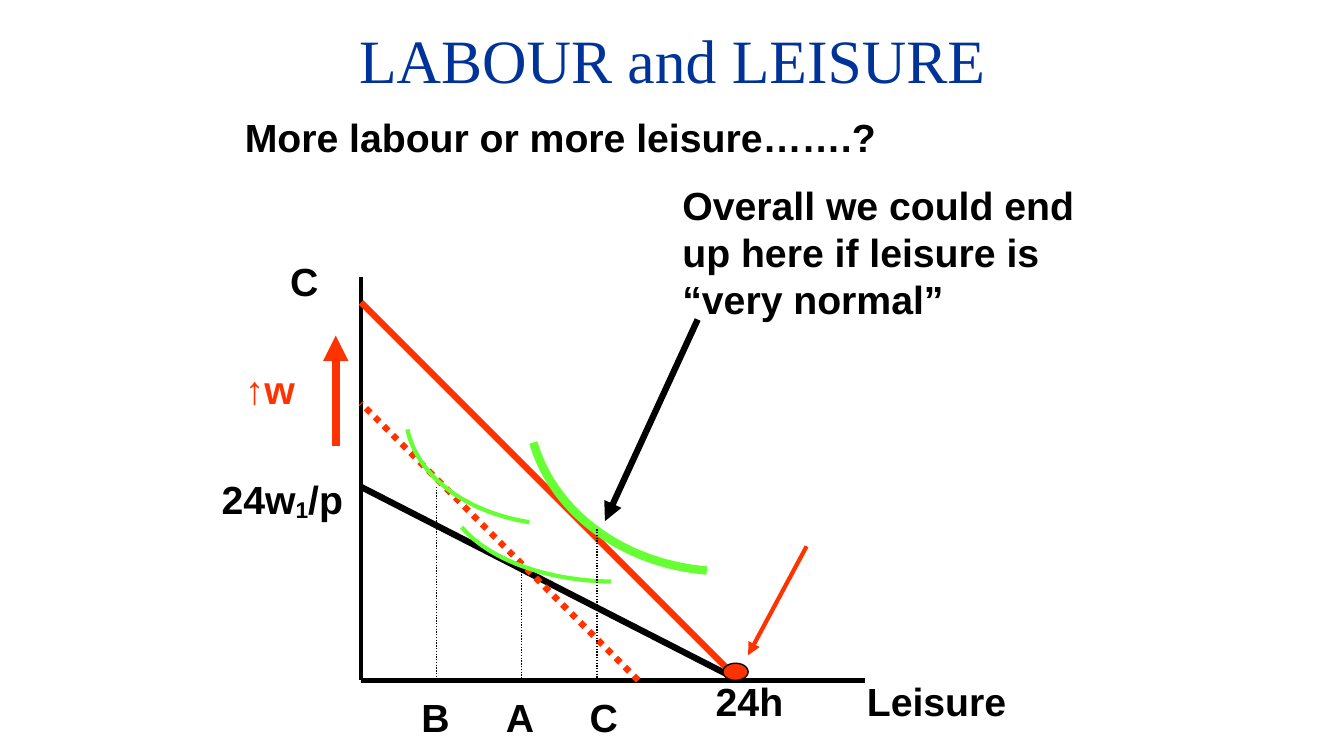
"""Build the labour and leisure budget-line slide."""
from dataclasses import dataclass
from typing import Optional

from lxml import etree
from pptx import Presentation
from pptx.dml.color import RGBColor
from pptx.enum.dml import MSO_LINE
from pptx.enum.shapes import MSO_CONNECTOR, MSO_SHAPE
from pptx.enum.text import MSO_ANCHOR, MSO_AUTO_SIZE, PP_ALIGN
from pptx.oxml.ns import qn
from pptx.slide import Slide
from pptx.util import Inches, Pt

STRAIGHT = MSO_CONNECTOR.STRAIGHT
ELLIPSE = MSO_SHAPE.OVAL
DOTTED = MSO_LINE.ROUND_DOT
TOP, MIDDLE = MSO_ANCHOR.TOP, MSO_ANCHOR.MIDDLE
LEFT, CENTER, RIGHT = PP_ALIGN.LEFT, PP_ALIGN.CENTER, PP_ALIGN.RIGHT
GROW, FIXED = MSO_AUTO_SIZE.SHAPE_TO_FIT_TEXT, MSO_AUTO_SIZE.NONE

Point = tuple[float, float]


@dataclass(frozen=True)
class Theme:
    black: RGBColor = RGBColor(0x00, 0x00, 0x00)
    blue: RGBColor = RGBColor(0x00, 0x33, 0x99)
    red: RGBColor = RGBColor(0xFF, 0x33, 0x00)
    green: RGBColor = RGBColor(0x66, 0xFF, 0x33)
    title_font: str = "Times New Roman"
    body_font: str = "Arial"
    title_size: float = 44
    body_size: float = 28


THEME = Theme()


@dataclass(frozen=True)
class Label:
    box: tuple[float, float, float, float]
    runs: tuple[str, ...]
    color: RGBColor = THEME.black
    align: PP_ALIGN = LEFT
    subscript: Optional[str] = None
    is_title: bool = False


@dataclass(frozen=True)
class Segment:
    start: Point
    end: Point
    color: RGBColor = THEME.black
    width: float = 4.5
    dotted: bool = False
    arrow: bool = False


@dataclass(frozen=True)
class IndifferenceCurve:
    points: tuple[Point, Point, Point, Point]
    width: float = 3


ORIGIN: Point = (3.58, 6.75)
LABEL_HEIGHT = 0.57
LETTER_TOP = 6.83

SEGMENTS = (
    Segment((ORIGIN[0], 2.75), ORIGIN, width=3),
    Segment(ORIGIN, (8.58, ORIGIN[1]), width=3),
    Segment((ORIGIN[0], 4.83), (7.33, ORIGIN[1])),
    Segment((7.25, 6.67), (ORIGIN[0], 3), THEME.red),
    Segment((6.33, ORIGIN[1]), (ORIGIN[0], 4), THEME.red, dotted=True),
    Segment((3.33, 4.42), (3.33, 3.33), THEME.red, 6, arrow=True),
    Segment((8, 5.42), (7.42, 6.5), THEME.red, 3, arrow=True),
    Segment((6.92, 3.17), (6, 5.17), arrow=True),
)

CURVES = (
    IndifferenceCurve(((7.01, 5.66), (6.17, 5.59), (5.49, 5.08), (5.29, 4.39)), 6),
    IndifferenceCurve(((6.06, 5.77), (5.41, 5.76), (4.85, 5.55), (4.58, 5.23))),
    IndifferenceCurve(((5.25, 5.18), (4.61, 5.08), (4.14, 4.72), (4.04, 4.26))),
)

GUIDES = tuple(
    Segment((x, top), (x, ORIGIN[1]), width=1, dotted=True)
    for x, top in ((4.33, 4.83), (5.17, 5.67), (5.92, 5.25))
)

LABELS = (
    Label((2.42, 0.25, 8.5, 0.67), ("LABOUR and LEISURE",), THEME.blue, CENTER, is_title=True),
    Label((2.33, 1.08, 6.83, LABEL_HEIGHT), ("More labour or more leisure…….?",)),
    Label((6.67, 1.75, 4.33, 1.5), ("Overall we could end up here if leisure is “very normal”",)),
    Label((2.78, 2.5, 0.89, LABEL_HEIGHT), ("C",)),
    Label((2.33, 3.58, 0.75, LABEL_HEIGHT), ("↑w",), THEME.red),
    Label((1.92, 4.67, 1.58, LABEL_HEIGHT), ("24w", "1", "/p"), align=RIGHT, subscript="1"),
    Label((7, 6.67, 1.08, LABEL_HEIGHT), ("24h",)),
    Label((8.5, 6.67, 1.83, LABEL_HEIGHT), ("Leisure",)),
    Label((4.08, LETTER_TOP, 0.42, LABEL_HEIGHT), ("B",)),
    Label((4.92, LETTER_TOP, 0.58, LABEL_HEIGHT), ("A",)),
    Label((5.75, LETTER_TOP, 0.75, LABEL_HEIGHT), ("C",)),
)


def add_label(slide: Slide, label: Label) -> None:
    shape = slide.shapes.add_textbox(*map(Inches, label.box))
    frame = shape.text_frame
    frame.word_wrap = True
    frame.auto_size = FIXED if label.is_title else GROW
    frame.vertical_anchor = MIDDLE if label.is_title else TOP
    paragraph = frame.paragraphs[0]
    paragraph.alignment = label.align
    for text in label.runs:
        run = paragraph.add_run()
        run.text = text
        run.font.name = THEME.title_font if label.is_title else THEME.body_font
        run.font.size = Pt(THEME.title_size if label.is_title else THEME.body_size)
        run.font.bold = not label.is_title
        run.font.color.rgb = label.color
        if text == label.subscript:
            run._r.get_or_add_rPr().set("baseline", "-10000")


def add_segment(slide: Slide, segment: Segment) -> None:
    connector = slide.shapes.add_connector(
        STRAIGHT, *map(Inches, segment.start + segment.end)
    )
    connector.line.color.rgb = segment.color
    connector.line.width = Pt(segment.width)
    if segment.dotted:
        connector.line.dash_style = DOTTED
    if segment.arrow:
        line = connector.line._get_or_add_ln()
        etree.SubElement(line, qn("a:tailEnd"), type="triangle")
    etree.SubElement(connector._element.spPr, qn("a:effectLst"))


def add_curve(slide: Slide, curve: IndifferenceCurve) -> None:
    start, *others = [(Inches(x), Inches(y)) for x, y in curve.points]
    builder = slide.shapes.build_freeform(*start)
    builder.add_line_segments(others, close=False)
    shape = builder.convert_to_shape()
    corners = shape._element.xpath(".//a:lnTo")
    outline = corners[0].getparent()
    bezier = etree.SubElement(outline, qn("a:cubicBezTo"))
    for corner in corners:
        bezier.append(corner[0])
        outline.remove(corner)
    shape.shadow.inherit = False
    shape.fill.background()
    shape.line.color.rgb = THEME.green
    shape.line.width = Pt(curve.width)


def add_endowment(slide: Slide) -> None:
    shape = slide.shapes.add_shape(ELLIPSE, *map(Inches, (7.17, 6.58, 0.25, 0.17)))
    shape.shadow.inherit = False
    shape.fill.solid()
    shape.fill.fore_color.rgb = THEME.red
    shape.line.color.rgb = THEME.black
    shape.line.width = Pt(1)


def main() -> None:
    presentation = Presentation()
    presentation.slide_width = Inches(13.33)
    presentation.slide_height = Inches(7.5)
    slide = presentation.slides.add_slide(presentation.slide_layouts[6])
    for segment in SEGMENTS:
        add_segment(slide, segment)
    add_endowment(slide)
    for curve in CURVES:
        add_curve(slide, curve)
    for guide in GUIDES:
        add_segment(slide, guide)
    for label in LABELS:
        add_label(slide, label)
    presentation.save("out.pptx")


if __name__ == "__main__":
    main()
